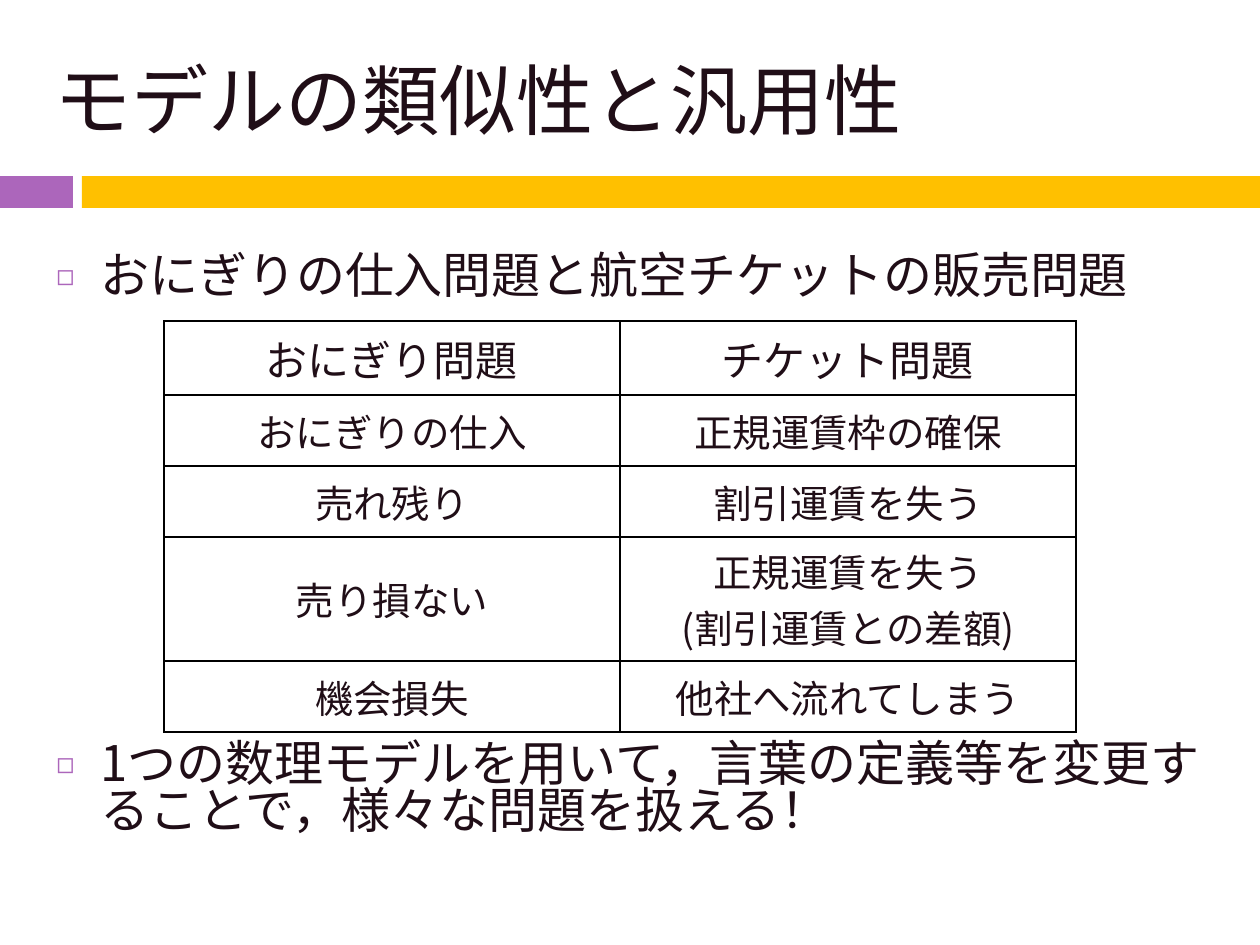
from dataclasses import dataclass

from lxml.etree import SubElement
from pptx import Presentation
from pptx.dml.color import RGBColor as Color
from pptx.enum.shapes import MSO_SHAPE as Preset
from pptx.enum.text import MSO_ANCHOR as Anchor, PP_ALIGN as Align
from pptx.oxml.ns import qn
from pptx.util import Pt

PX = 914400 / 126


@dataclass(frozen=True)
class Theme:
    """Colours, font and type sizes of the slide."""
    ink: str = "200E17"
    accent: str = "AC66BB"
    band: str = "FFC000"
    border: str = "000000"
    font: str = "Noto Sans CJK JP"
    title: int = 44
    body: int = 28
    header: int = 24
    cell: int = 22


THEME = Theme()


def px(value):
    """Turn pixels into EMU."""
    return round(value * PX)


def apply(target, values):
    """Set each attribute of target from a dict."""
    for name, value in values.items():
        setattr(target, name, value)


def write(paragraph, text, size, **layout):
    """Write one run in the theme's font and lay out its paragraph."""
    apply(paragraph, layout)
    run = paragraph.add_run()
    run.text = text
    apply(run.font, {"name": THEME.font, "size": Pt(size)})
    run.font.color.rgb = Color.from_string(THEME.ink)
    SubElement(run.font._element, qn("a:ea"), typeface=THEME.font)


def add_bullet(paragraph, indent):
    """Give a paragraph a hanging square bullet."""
    properties = paragraph._p.get_or_add_pPr()
    apply_indent = {"marL": px(indent), "indent": -px(indent)}
    for name, value in apply_indent.items():
        properties.set(name, str(value))
    colour = SubElement(properties, qn("a:buClr"))
    SubElement(colour, qn("a:srgbClr"), val=THEME.accent)
    SubElement(properties, qn("a:buSzPct"), val="60000")
    SubElement(properties, qn("a:buFont"), typeface=THEME.font)
    SubElement(properties, qn("a:buChar"), char="◻")


def add_text_frame(slide, box, anchor):
    """Add a wrapping text box and return its frame."""
    frame = slide.shapes.add_textbox(*map(px, box)).text_frame
    apply(frame, {"word_wrap": True, "vertical_anchor": anchor,
                  "margin_right": px(8)})
    return frame


def add_title(slide, box, text):
    """Place the slide title."""
    frame = add_text_frame(slide, box, Anchor.MIDDLE)
    write(frame.paragraphs[0], text, THEME.title)


def add_divider(slide, box, tab_width, gap):
    """Place the two-colour band below the title."""
    left, top, width, height = box
    band_offset = tab_width + gap
    parts = [(left, tab_width, THEME.accent),
             (left + band_offset, width - band_offset, THEME.band)]
    for part_left, part_width, colour in parts:
        part = (part_left, top, part_width, height)
        shape = slide.shapes.add_shape(Preset.RECTANGLE, *map(px, part))
        shape.shadow.inherit = False
        shape.fill.solid()
        shape.fill.fore_color.rgb = Color.from_string(colour)
        shape.line.fill.background()


def add_points(slide, box, points, gap):
    """Place bulleted points with a gap left for the table."""
    frame = add_text_frame(slide, box, Anchor.TOP)
    for index, text in enumerate(points):
        paragraph = frame.add_paragraph() if index else frame.paragraphs[0]
        add_bullet(paragraph, 44)
        write(paragraph, text, THEME.body, line_spacing=0.8,
              space_before=px(gap) if index else 0)


def add_borders(cell):
    """Draw a thin line on every side of a cell."""
    properties = cell._tc.get_or_add_tcPr()
    for side in ("lnL", "lnR", "lnT", "lnB"):
        line = SubElement(properties, qn(f"a:{side}"), w=str(Pt(1)))
        fill = SubElement(line, qn("a:solidFill"))
        SubElement(fill, qn("a:srgbClr"), val=THEME.border)


def add_comparison(slide, box, rows, heights):
    """Place the table that compares the two problems."""
    frame = slide.shapes.add_table(len(rows), len(rows[0]), *map(px, box))
    table = frame.table
    apply(table, {"first_row": False, "horz_banding": False})
    for row_index, (texts, height) in enumerate(zip(rows, heights)):
        table.rows[row_index].height = px(height)
        size = THEME.cell if row_index else THEME.header
        for column_index, text in enumerate(texts):
            cell = table.cell(row_index, column_index)
            add_borders(cell)
            cell.fill.background()
            cell.vertical_anchor = Anchor.MIDDLE
            for index, line in enumerate(text.split("\n")):
                text_frame = cell.text_frame
                paragraph = (text_frame.add_paragraph() if index
                             else text_frame.paragraphs[0])
                write(paragraph, line, size, alignment=Align.CENTER)


def main():
    """Build and save the slide."""
    presentation = Presentation()
    apply(presentation, {"slide_width": px(1260), "slide_height": px(945)})
    slide = presentation.slides.add_slide(presentation.slide_layouts[6])
    add_divider(slide, (0, 176, 1260, 32), 73, 9)
    add_title(slide, (42, 31, 1173, 136), "モデルの類似性と汎用性")
    add_points(slide, (44, 250, 1181, 669), [
        "おにぎりの仕入問題と航空チケットの販売問題",
        "1つの数理モデルを用いて，言葉の定義等を変更することで，様々な問題を扱える！",
    ], 441)
    add_comparison(slide, (164, 321, 912, 411), [
        ("おにぎり問題", "チケット問題"),
        ("おにぎりの仕入", "正規運賃枠の確保"),
        ("売れ残り", "割引運賃を失う"),
        ("売り損ない", "正規運賃を失う\n(割引運賃との差額)"),
        ("機会損失", "他社へ流れてしまう"),
    ], [74, 71, 71, 124, 71])
    presentation.save("out.pptx")


if __name__ == "__main__":
    main()
